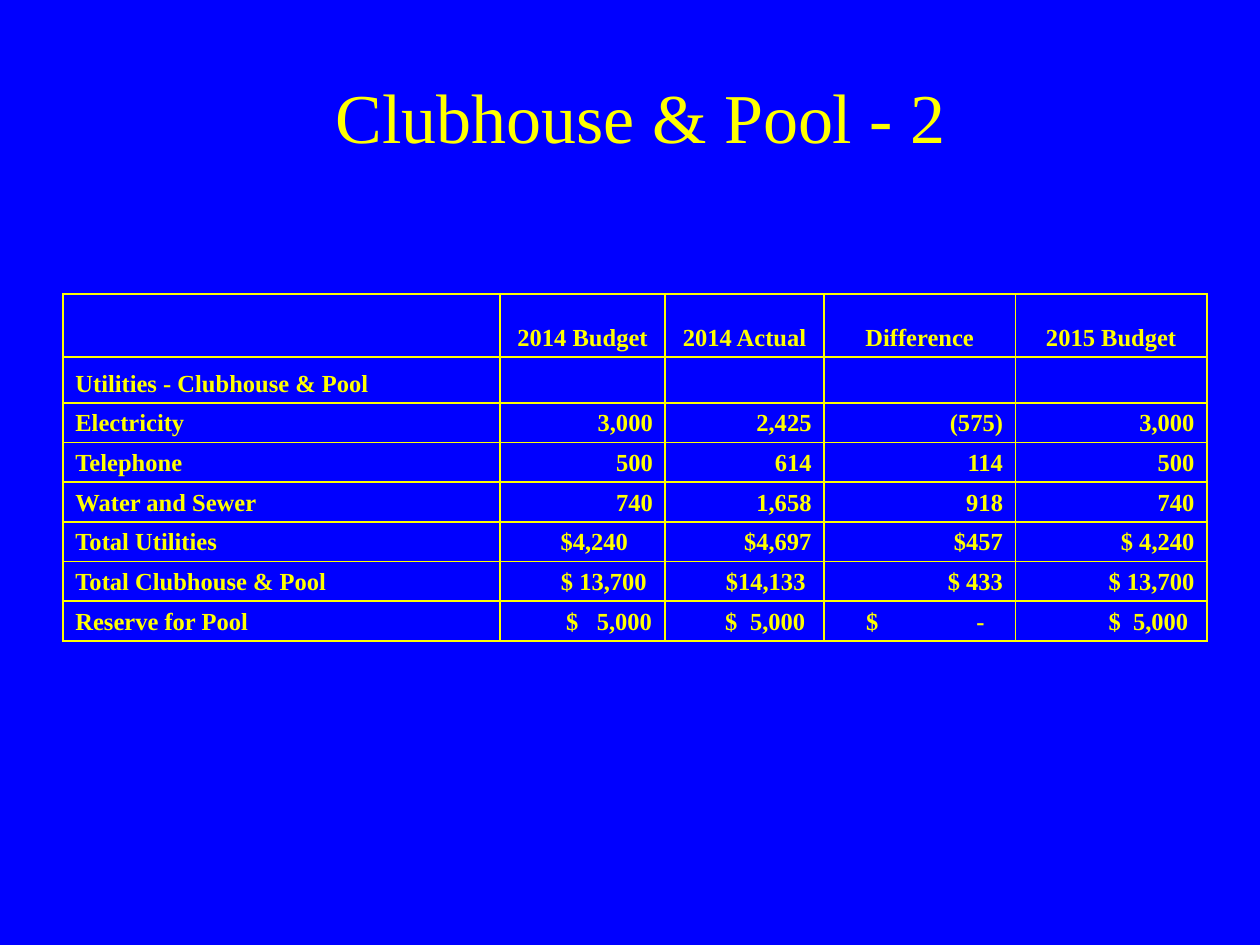
from dataclasses import dataclass
from typing import Optional

from lxml.etree import SubElement
from pptx import Presentation
from pptx.dml.color import RGBColor as Color
from pptx.enum.text import MSO_ANCHOR as Anchor, PP_ALIGN as Align
from pptx.oxml.ns import qn
from pptx.util import Cm, Pt


@dataclass(frozen=True)
class Theme:
    background: Color = Color(0x00, 0x00, 0xFF)
    ink: Color = Color(0xFF, 0xFF, 0x00)
    font: str = "Times New Roman"
    title_size: int = 40
    table_size: int = 14
    border_width: float = 1


@dataclass(frozen=True)
class Entry:
    """Table cell content; left, right and tab are in centimetres."""
    text: str = ""
    align: Align = Align.RIGHT
    left: float = 0.25
    right: float = 0.25
    tab: Optional[float] = None


THEME = Theme()
COLUMN_WIDTHS = (8.81, 3.33, 3.2, 3.86, 3.86)
ROW_HEIGHTS = (1.27, 0.92) + (0.8,) * 6


def label(text: str) -> Entry:
    return Entry(text, Align.LEFT)


def ledger(amount: str, left: float, tab: float) -> Entry:
    """Dollar sign at the left, amount at a tab stop."""
    return Entry(f"$\t{amount}", Align.LEFT, left=left, right=0, tab=tab)


HEADINGS = ("", "2014 Budget", "2014 Actual", "Difference", "2015 Budget")
ACCOUNTS = (
    ("Utilities - Clubhouse & Pool", "", "", "", ""),
    ("Electricity", "3,000", "2,425", "(575)", "3,000"),
    ("Telephone", "500", "614", "114", "500"),
    ("Water and Sewer", "740", "1,658", "918", "740"),
    ("Total Utilities", Entry("$4,240", right=0.75), "$4,697", "$457", "$ 4,240"),
    ("Total Clubhouse & Pool", Entry("$ 13,700", right=0.37),
     Entry("$14,133", right=0.37), "$ 433", "$ 13,700"),
    ("Reserve for Pool", ledger("5,000", 1.33, 0.62), ledger("5,000", 1.21, 0.5),
     ledger("-", 0.85, 2.22), ledger("5,000", 1.88, 0.49)),
)


def set_values(target, values: dict) -> None:
    for name, value in values.items():
        setattr(target, name, value)


def style_font(font, size: float, bold: bool) -> None:
    set_values(font, {"name": THEME.font, "size": Pt(size), "bold": bold})
    font.color.rgb = THEME.ink


def add_borders(cell) -> None:
    properties = cell._tc.get_or_add_tcPr()
    for position, side in enumerate(("lnL", "lnR", "lnT", "lnB")):
        line = SubElement(properties, qn(f"a:{side}"), w=str(Pt(THEME.border_width)))
        fill = SubElement(line, qn("a:solidFill"))
        SubElement(fill, qn("a:srgbClr"), val=str(THEME.ink))
        properties.insert(position, line)


def fill_cell(cell, entry: Entry) -> None:
    set_values(cell, {
        "vertical_anchor": Anchor.BOTTOM,
        "margin_left": Cm(entry.left), "margin_right": Cm(entry.right),
        "margin_top": Cm(0.11), "margin_bottom": Cm(0.11),
    })
    cell.fill.solid()
    cell.fill.fore_color.rgb = THEME.background
    add_borders(cell)

    paragraph = cell.text_frame.paragraphs[0]
    paragraph.alignment = entry.align
    if entry.tab is not None:
        tabs = SubElement(paragraph._p.get_or_add_pPr(), qn("a:tabLst"))
        SubElement(tabs, qn("a:tab"), pos=str(Cm(entry.tab)), algn="l")
    if entry.text:
        run = paragraph.add_run()
        run.text = entry.text
        style_font(run.font, THEME.table_size, True)
    else:
        # Keeps blank cells from stretching their row
        SubElement(paragraph._p, qn("a:endParaRPr"), sz=str(THEME.table_size * 100))


def add_title(slide, text: str) -> None:
    title = slide.shapes.title
    set_values(title, {"left": Cm(2.12), "top": Cm(1.48),
                       "width": Cm(21.59), "height": Cm(1.7)})
    set_values(title.text_frame, {"text": text, "vertical_anchor": Anchor.MIDDLE})
    paragraph = title.text_frame.paragraphs[0]
    paragraph.alignment = Align.CENTER
    style_font(paragraph.runs[0].font, THEME.title_size, False)


def add_budget_table(slide) -> None:
    rows = [[Entry(text, Align.CENTER) for text in HEADINGS]]
    for name, *amounts in ACCOUNTS:
        rows.append([label(name)] + [
            amount if isinstance(amount, Entry) else Entry(amount) for amount in amounts])

    table = slide.shapes.add_table(
        len(rows), len(COLUMN_WIDTHS), Cm(1.27), Cm(5.93),
        Cm(sum(COLUMN_WIDTHS)), Cm(sum(ROW_HEIGHTS))).table
    set_values(table, {"first_row": False, "horz_banding": False})
    for column, width in zip(table.columns, COLUMN_WIDTHS):
        column.width = Cm(width)
    for table_row, height, entries in zip(table.rows, ROW_HEIGHTS, rows):
        table_row.height = Cm(height)
        for cell, entry in zip(table_row.cells, entries):
            fill_cell(cell, entry)


def main() -> None:
    presentation = Presentation()
    set_values(presentation, {"slide_width": Cm(25.4), "slide_height": Cm(19.05)})
    slide = presentation.slides.add_slide(presentation.slide_layouts[5])

    # Background
    slide.background.fill.solid()
    slide.background.fill.fore_color.rgb = THEME.background

    # Title and table
    add_title(slide, "Clubhouse & Pool - 2")
    add_budget_table(slide)
    presentation.save("out.pptx")


if __name__ == "__main__":
    main()
